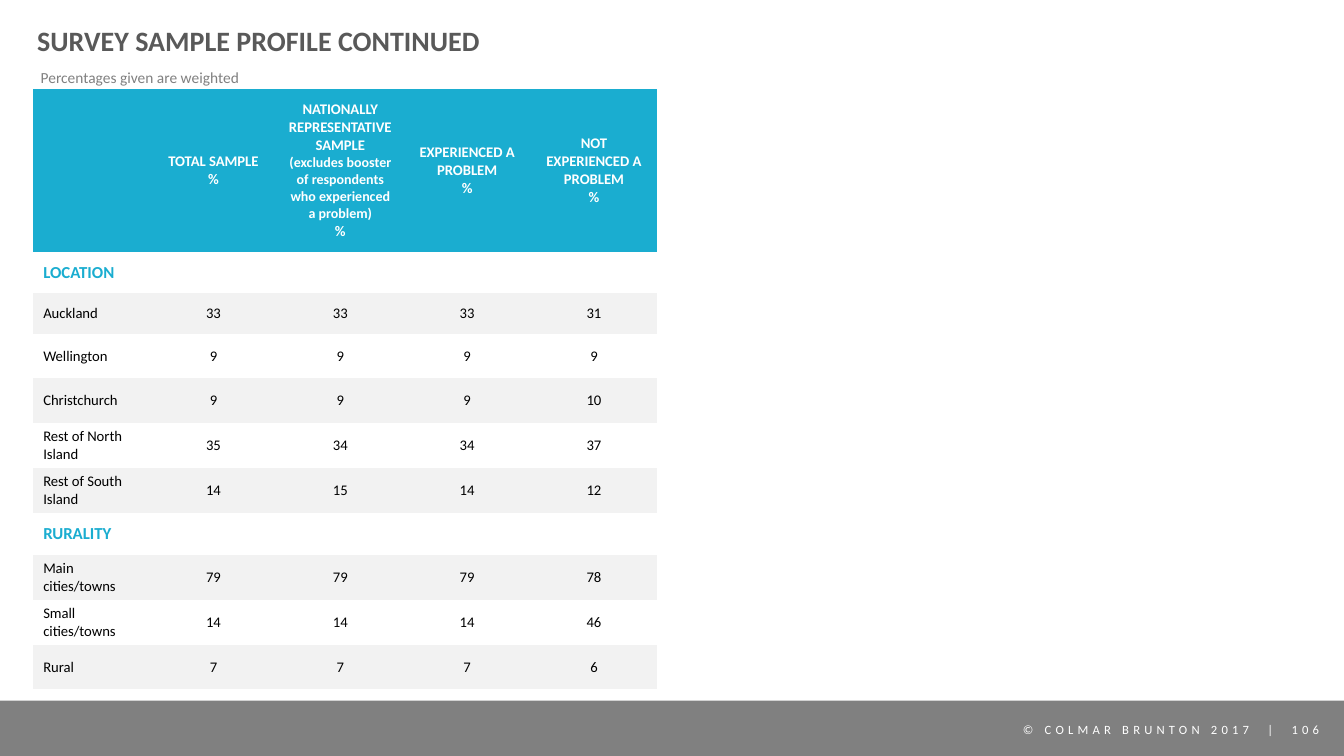
from pptx import Presentation
from pptx import util as u
from pptx.dml import color
from pptx.enum import shapes, text
from pptx.oxml import ns

TITLE = "SURVEY SAMPLE PROFILE CONTINUED"
SUBTITLE = "Percentages given are weighted"
FOOTER = "© COLMAR BRUNTON 2017  |  106"
GROUPS = [
    ("TOTAL SAMPLE", ""),
    ("NATIONALLY REPRESENTATIVE SAMPLE ",
     "(excludes booster of respondents who experienced a problem)"),
    ("EXPERIENCED A PROBLEM", ""),
    ("NOT EXPERIENCED A PROBLEM", ""),
]
PROFILE = [
    ("LOCATION",),
    ("Auckland", 33, 33, 33, 31),
    ("Wellington", 9, 9, 9, 9),
    ("Christchurch", 9, 9, 9, 10),
    ("Rest of North Island", 35, 34, 34, 37),
    ("Rest of South Island", 14, 15, 14, 12),
    ("RURALITY",),
    ("Main cities/towns", 79, 79, 79, 78),
    ("Small cities/towns", 14, 14, 14, 46),
    ("Rural", 7, 7, 7, 6),
]
HEADER_HEIGHT = 116
ROW_HEIGHTS = [29.5, 29.5, 31.5, 31.5, 31.5, 31.5, 29.5, 29.5, 29.5, 31.5]
LABEL_WIDTH, GROUP_WIDTH = 83.5, 90.6
TEAL, BAND, GREY = "1AADD0", "F2F2F2", "808080"
NO_STYLE = "{2D5ABB26-0587-4C30-8999-92F81FD0307C}"
CENTER, LEFT = text.PP_ALIGN.CENTER, text.PP_ALIGN.LEFT


def paint(target, hex_color):
    target.rgb = color.RGBColor.from_string(hex_color)


def fill(part, hex_color):
    part.fill.solid()
    paint(part.fill.fore_color, hex_color)


def style(paragraph, size, hex_color, bold=False, align=LEFT):
    paragraph.alignment = align
    font = paragraph.font
    font.name, font.size, font.bold = "Calibri", u.Pt(size), bold
    paint(font.color, hex_color)


def add_text(words, left, top, width, height, **look):
    frame = slide.shapes.add_textbox(*map(u.Pt, (left, top, width, height))).text_frame
    frame.word_wrap = True
    frame.text = words
    style(frame.paragraphs[0], **look)
    return frame


def write(cell, words, **look):
    cell.vertical_anchor = text.MSO_ANCHOR.MIDDLE
    cell.text = str(words)
    for paragraph in cell.text_frame.paragraphs:
        style(paragraph, **look)


deck = Presentation()
deck.slide_width, deck.slide_height = u.Pt(960), u.Pt(540)
slide = deck.slides.add_slide(deck.slide_layouts[6])

bar = slide.shapes.add_shape(shapes.MSO_SHAPE.RECTANGLE, 0, u.Pt(500.4), u.Pt(960), u.Pt(39.6))
bar.shadow.inherit = False
fill(bar, GREY)
bar.line.fill.background()

footer = add_text(FOOTER, 705, 512, 262.8, 18, size=9, hex_color="FFFFFF", align=CENTER)
footer.paragraphs[0].runs[0].font._element.set("spc", "300")

title = add_text(TITLE, 26.6, 8, 775.4, 44.6, size=20, hex_color="595959", bold=True)
title.margin_left = title.margin_right = title.margin_top = title.margin_bottom = 0
title.vertical_anchor = text.MSO_ANCHOR.MIDDLE
title.paragraphs[0].line_spacing = 0.9

frame = slide.shapes.add_table(
    len(PROFILE) + 1, len(GROUPS) + 1, u.Pt(23.7), u.Pt(63.9),
    u.Pt(LABEL_WIDTH + GROUP_WIDTH * len(GROUPS)), u.Pt(HEADER_HEIGHT + sum(ROW_HEIGHTS)))
profile = frame.table
profile.first_row = profile.horz_banding = False
next(frame._element.iter(ns.qn("a:tableStyleId"))).text = NO_STYLE
for column, width in zip(profile.columns, [LABEL_WIDTH] + [GROUP_WIDTH] * len(GROUPS)):
    column.width = u.Pt(width)
for row, height in zip(profile.rows, [HEADER_HEIGHT] + ROW_HEIGHTS):
    row.height = u.Pt(height)

fill(profile.cell(0, 0), TEAL)
for c, (group, remark) in enumerate(GROUPS, 1):
    header = profile.cell(0, c)
    fill(header, TEAL)
    write(header, group + "\n%", size=10.5, hex_color="FFFFFF", bold=True, align=CENTER)
    if remark:
        remark_run = header.text_frame.paragraphs[0].add_run()
        remark_run.text = remark
        remark_run.font.size = u.Pt(10)

for r, (label, *shares) in enumerate(PROFILE, 1):
    first = profile.cell(r, 0)
    if not shares:
        first.merge(profile.cell(r, len(GROUPS)))
        write(first, label, size=12, hex_color=TEAL, bold=True)
    else:
        write(first, label, size=10.5, hex_color="000000")
    for c, share in enumerate(shares, 1):
        write(profile.cell(r, c), share, size=10.5, hex_color="000000", align=CENTER)
    for cell in profile.rows[r].cells:
        if r % 2 == 0:
            fill(cell, BAND)
        else:
            cell.fill.background()

subtitle = add_text(SUBTITLE, 22, 45.4, 158.4, 20.6, size=11, hex_color=GREY)
subtitle.word_wrap = False

deck.save("out.pptx")
